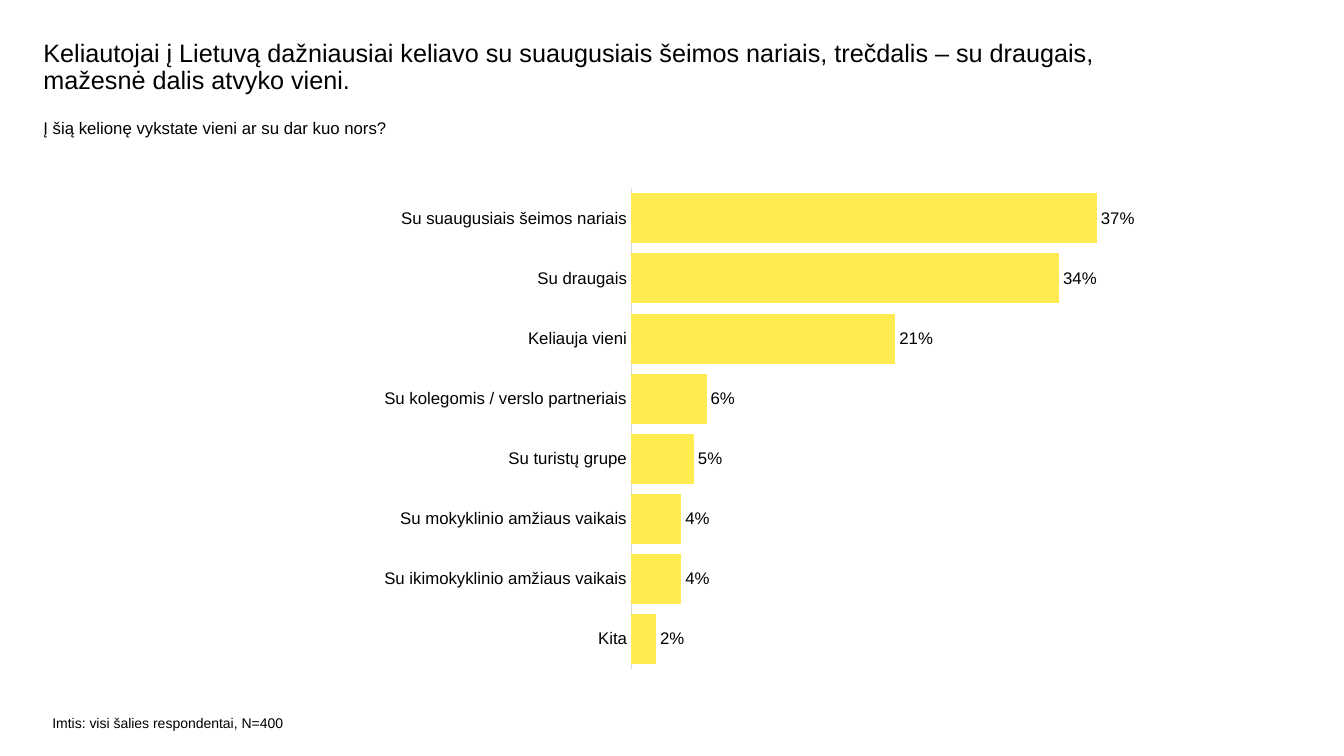
from lxml import etree
from pptx import Presentation
from pptx.chart.data import CategoryChartData
from pptx.dml.color import RGBColor
from pptx.enum import chart as ch
from pptx.oxml import ns
from pptx.util import Pt

COLORS = {"text": "000000", "bar": "FFEB50", "axis": "D9D9D9"}
FONT = "Arial"

COMPANIONS = {
    "Kita": 0.02,
    "Su ikimokyklinio amžiaus vaikais": 0.04,
    "Su mokyklinio amžiaus vaikais": 0.04,
    "Su turistų grupe": 0.05,
    "Su kolegomis / verslo partneriais": 0.06,
    "Keliauja vieni": 0.21,
    "Su draugais": 0.34,
    "Su suaugusiais šeimos nariais": 0.37,
}
PLOT_LAYOUT = {"x": 0.333, "y": 0.02, "w": 0.64, "h": 0.96}


def set_attributes(target, values):
    for name, value in values.items():
        setattr(target, name, value)


def style_font(font, size):
    set_attributes(font, {"name": FONT, "size": Pt(size)})
    font.color.rgb = RGBColor.from_string(COLORS["text"])


def add_text(slide, wording, box, size, line_spacing=1.0):
    shape = slide.shapes.add_textbox(*map(Pt, box))
    frame = shape.text_frame
    set_attributes(frame, {"word_wrap": True, "margin_left": 0, "margin_top": 0,
                           "margin_right": 0, "margin_bottom": 0})
    paragraph = frame.paragraphs[0]
    paragraph.line_spacing = line_spacing
    run = paragraph.add_run()
    run.text = wording
    style_font(run.font, size)


def fix_plot_area(chart):
    """Place the inner plot area at fixed fractions of the chart."""
    plot_area = chart.plots[0]._element.getparent()
    layout = plot_area.find(ns.qn("c:layout"))
    if layout is None:
        layout = etree.Element(ns.qn("c:layout"))
        plot_area.insert(0, layout)
    manual = etree.SubElement(layout, ns.qn("c:manualLayout"))
    settings = {"layoutTarget": "inner", "xMode": "edge", "yMode": "edge", **PLOT_LAYOUT}
    for name, value in settings.items():
        etree.SubElement(manual, ns.qn(f"c:{name}")).set("val", str(value))


def add_bar_chart(slide, values, box):
    data = CategoryChartData(number_format="0%")
    data.categories = list(values)
    data.add_series("Series 1", list(values.values()))
    chart = slide.shapes.add_chart(
        ch.XL_CHART_TYPE.BAR_CLUSTERED, *map(Pt, box), data).chart
    set_attributes(chart, {"has_legend": False, "has_title": False})
    style_font(chart.font, 12)

    set_attributes(chart.value_axis, {"visible": False, "has_major_gridlines": False,
                                      "minimum_scale": 0, "maximum_scale": 0.4})
    axis = chart.category_axis
    set_attributes(axis, {"major_tick_mark": ch.XL_TICK_MARK.NONE,
                          "has_major_gridlines": False})
    style_font(axis.tick_labels.font, 12)
    axis.format.line.width = Pt(0.75)
    axis.format.line.color.rgb = RGBColor.from_string(COLORS["axis"])

    plot = chart.plots[0]
    set_attributes(plot, {"gap_width": 20, "vary_by_categories": False,
                          "has_data_labels": True})
    set_attributes(plot.data_labels, {
        "show_value": True, "number_format": "0%", "number_format_is_linked": False,
        "position": ch.XL_LABEL_POSITION.OUTSIDE_END})
    style_font(plot.data_labels.font, 12)
    fill = plot.series[0].format.fill
    fill.solid()
    fill.fore_color.rgb = RGBColor.from_string(COLORS["bar"])
    fix_plot_area(chart)


def main():
    presentation = Presentation()
    set_attributes(presentation, {"slide_width": Pt(960), "slide_height": Pt(540)})
    slide = presentation.slides.add_slide(presentation.slide_layouts[6])
    add_text(slide, "Keliautojai į Lietuvą dažniausiai keliavo su suaugusiais šeimos "
             "nariais, trečdalis – su draugais, mažesnė dalis atvyko vieni.",
             (31, 28.8, 810, 43.2), 18, line_spacing=0.9)
    add_text(slide, "Į šią kelionę vykstate vieni ar su dar kuo nors?",
             (31, 84.2, 856, 44), 12)
    add_text(slide, "Imtis: visi šalies respondentai, N=400",
             (37.4, 510.5, 182, 17.3), 10)
    add_bar_chart(slide, COMPANIONS, (263.5, 127.4, 562.3, 357.8))
    presentation.save("out.pptx")


if __name__ == "__main__":
    main()
